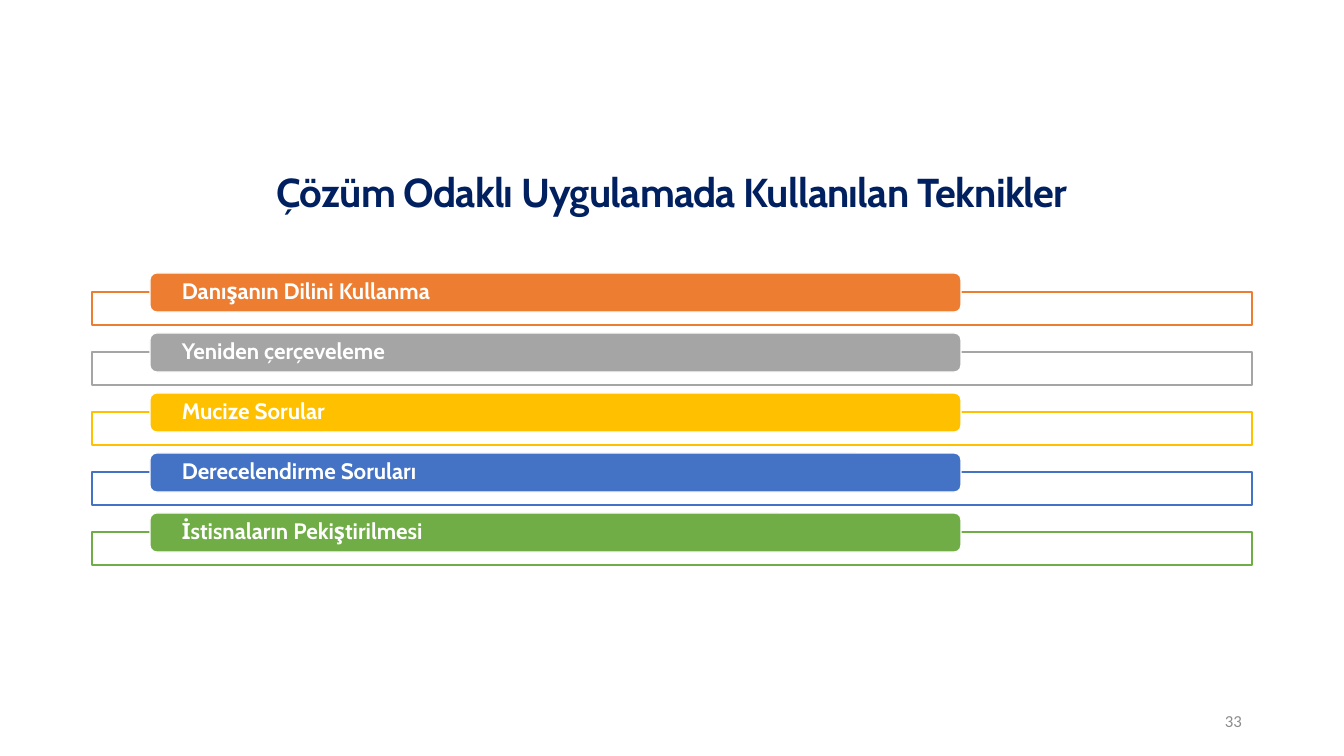
from pptx import Presentation
from pptx.dml.color import RGBColor
from pptx.enum.shapes import MSO_SHAPE
from pptx.enum.text import MSO_ANCHOR, MSO_AUTO_SIZE, PP_ALIGN
from pptx.oxml.ns import qn
from pptx.util import Pt
from lxml import etree

PX = 914400 / 100.8
RECT, ROUNDED = MSO_SHAPE.RECTANGLE, MSO_SHAPE.ROUNDED_RECTANGLE
MIDDLE, NO_AUTOFIT = MSO_ANCHOR.MIDDLE, MSO_AUTO_SIZE.NONE
LEFT, CENTER, RIGHT = PP_ALIGN.LEFT, PP_ALIGN.CENTER, PP_ALIGN.RIGHT

COLORS = {
    "navy": "002060", "white": "FFFFFF", "page_gray": "8C8C8C",
    "orange": "ED7D31", "gray": "A5A5A5", "gold": "FFC000",
    "blue": "4472C4", "green": "70AD47",
}
TECHNIQUES = [
    ("Danışanın Dilini Kullanma", "orange"),
    ("Yeniden çerçeveleme", "gray"),
    ("Mucize Sorular", "gold"),
    ("Derecelendirme Soruları", "blue"),
    ("İstisnaların Pekiştirilmesi", "green"),
]
TITLE_FONT = {"name": "Cabin", "size": Pt(28.8), "bold": True}
TECHNIQUE_FONT = {"name": "Cabin", "size": Pt(16), "bold": True}
NUMBER_FONT = {"name": "Calibri", "size": Pt(12), "bold": False}


def px(length):
    return round(length * PX)


def rgb(color):
    return RGBColor.from_string(COLORS[color])


def write(holder, text, font, color, align, side_inset=10, end_inset=5, spacing=0.9):
    """Put one formatted, vertically centred line of text in a shape."""
    frame = holder.text_frame
    frame_format = {
        "word_wrap": True, "auto_size": NO_AUTOFIT, "vertical_anchor": MIDDLE,
        "margin_left": px(side_inset), "margin_right": px(side_inset),
        "margin_top": px(end_inset), "margin_bottom": px(end_inset),
    }
    for name, value in frame_format.items():
        setattr(frame, name, value)
    line = frame.paragraphs[0]
    line.alignment = align
    line.line_spacing = spacing
    run = line.add_run()
    run.text = text
    for name, value in font.items():
        setattr(run.font, name, value)
    run.font.color.rgb = rgb(color)
    return run


def add_block(slide, kind, box, fill, outline):
    block = slide.shapes.add_shape(kind, *map(px, box))
    block.shadow.inherit = False
    block.fill.solid()
    block.fill.fore_color.rgb = rgb(fill)
    block.line.color.rgb = rgb(outline)
    block.line.width = Pt(1)
    return block


def place_title(slide, box, text):
    title = slide.shapes.title
    title.left, title.top, title.width, title.height = map(px, box)
    run = write(title, text, TITLE_FONT, "navy", CENTER)
    run.font._element.set("spc", "-50")


def add_technique(slide, box, text, color):
    """Draw a frame along the lower part of the box with a label bar across its top edge."""
    left, top, width, height = box
    frame_top = 19
    frame = add_block(slide, RECT, (left, top + frame_top, width, height - frame_top),
                      "white", color)
    frame_color = frame.fill._xPr.find(qn("a:solidFill"))[0]
    etree.SubElement(frame_color, qn("a:alpha")).set("val", "90000")
    bar = add_block(slide, ROUNDED, (left + 58, top, 811, 39), color, "white")
    write(bar, text, TECHNIQUE_FONT, "white", LEFT, side_inset=30, end_inset=0)


def add_technique_list(slide, box):
    left, top, width, height = box
    pitch, row_height = 60, 52
    for row, (text, color) in enumerate(TECHNIQUES):
        add_technique(slide, (left, top + row * pitch, width, row_height), text, color)


def add_page_number(slide, box, number):
    holder = slide.shapes.add_textbox(*map(px, box))
    write(holder, number, NUMBER_FONT, "page_gray", RIGHT, spacing=1.0)


def main():
    deck = Presentation()
    deck.slide_width, deck.slide_height = px(1344), px(756)
    slide = deck.slides.add_slide(deck.slide_layouts[5])
    place_title(slide, (92, 169, 1160, 50), "Çözüm Odaklı Uygulamada Kullanılan Teknikler")
    add_technique_list(slide, (92, 273, 1160, 292))
    add_page_number(slide, (950, 701, 302, 40), "33")
    deck.save("out.pptx")


if __name__ == "__main__":
    main()
